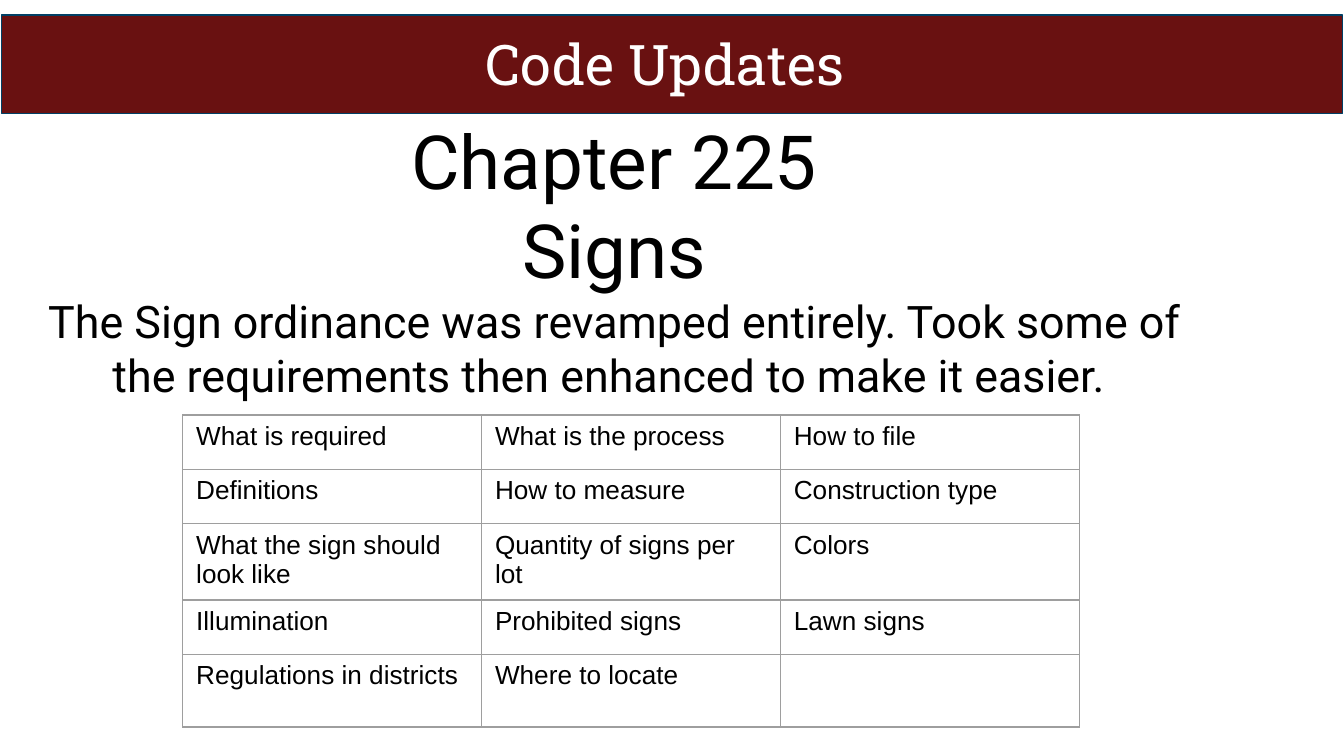
from lxml.etree import SubElement as Sub
from pptx import Presentation
from pptx.dml.color import RGBColor
from pptx.enum.shapes import MSO_SHAPE as Shape
from pptx.enum.text import MSO_ANCHOR as Anchor, PP_ALIGN as Align
from pptx.oxml.ns import qn
from pptx.util import Inches, Pt

WIDE = Inches(10)
HIGH = WIDE * 9 // 16
TOPICS = [
    ["What is required", "What is the process", "How to file"],
    ["Definitions", "How to measure", "Construction type"],
    ["What the sign should look like", "Quantity of signs per lot", "Colors"],
    ["Illumination", "Prohibited signs", "Lawn signs"],
    ["Regulations in districts", "Where to locate", ""],
]
ROWS = [7.2, 7.2, 9.6, 7.2, 9.6]


def color(text):
    return RGBColor.from_string(text)


def area(left, top, width, height):
    """Turn percentages of the slide into lengths."""
    return [round(share * side / 100) for share, side in
            zip((left, top, width, height), (WIDE, HIGH, WIDE, HIGH))]


def style(para, size, face, ink):
    font = para.font
    font.size, font.name = Pt(size), face
    font.color.rgb = color(ink)


def inset(frame, side, end):
    frame.margin_left = frame.margin_right = Inches(side)
    frame.margin_top = frame.margin_bottom = Inches(end)


def add_band(slide, box, fill, edge):
    band = slide.shapes.add_shape(Shape.RECTANGLE, *area(*box))
    band.shadow.inherit = False
    band.fill.solid()
    band.fill.fore_color.rgb = color(fill)
    band.line.color.rgb = color(edge)
    band.line.width = Pt(0.75)


def add_text(slide, box, lines, face, ink, gap, anchor=Anchor.TOP):
    """Add a centred text box; lines holds pairs of text and size."""
    frame = slide.shapes.add_textbox(*area(*box)).text_frame
    frame.word_wrap = True
    frame.vertical_anchor = anchor
    inset(frame, gap, gap)
    for i, (text, size) in enumerate(lines):
        para = frame.add_paragraph() if i else frame.paragraphs[0]
        para.text = text
        para.alignment = Align.CENTER
        style(para, size, face, ink)


def border(cell, ink):
    props = cell._tc.get_or_add_tcPr()
    for i, side in enumerate(("lnL", "lnR", "lnT", "lnB")):
        line = props.makeelement(qn(f"a:{side}"), {"w": str(Pt(0.75))})
        Sub(Sub(line, qn("a:solidFill")), qn("a:srgbClr"), val=ink)
        props.insert(i, line)


def add_grid(slide, left, top, width, rows, cells):
    box = area(left, top, width, sum(rows))
    table = slide.shapes.add_table(len(cells), len(cells[0]), *box).table
    table.first_row = table.horz_banding = False
    for row, high, texts in zip(table.rows, rows, cells):
        row.height = round(high * HIGH / 100)
        for cell, text in zip(row.cells, texts):
            cell.text = text
            inset(cell, 0.1, 0.05)
            cell.fill.background()
            border(cell, "9E9E9E")
            style(cell.text_frame.paragraphs[0], 14, "Arial", "000000")


def main():
    deck = Presentation()
    deck.slide_width, deck.slide_height = WIDE, HIGH
    slide = deck.slides.add_slide(deck.slide_layouts[6])
    add_band(slide, (0.1, 2, 99.8, 13), "691111", "004065")
    add_text(slide, (5.9, 5.3, 88.2, 9.6), [("Code Updates ", 30)],
             "Roboto Slab", "FFFFFF", 0.12, Anchor.BOTTOM)
    add_text(slide, (1.1, 13.4, 89.2, 84.1), [
        ("Chapter 225", 40),
        ("Signs", 40),
        ("The Sign ordinance was revamped entirely. Took some of the "
         "requirements then enhanced to make it easier. ", 24),
    ], "Roboto", "000000", 0.1)
    add_grid(slide, 13.6, 54.9, 66.7, ROWS, TOPICS)
    deck.save("out.pptx")


if __name__ == "__main__":
    main()
